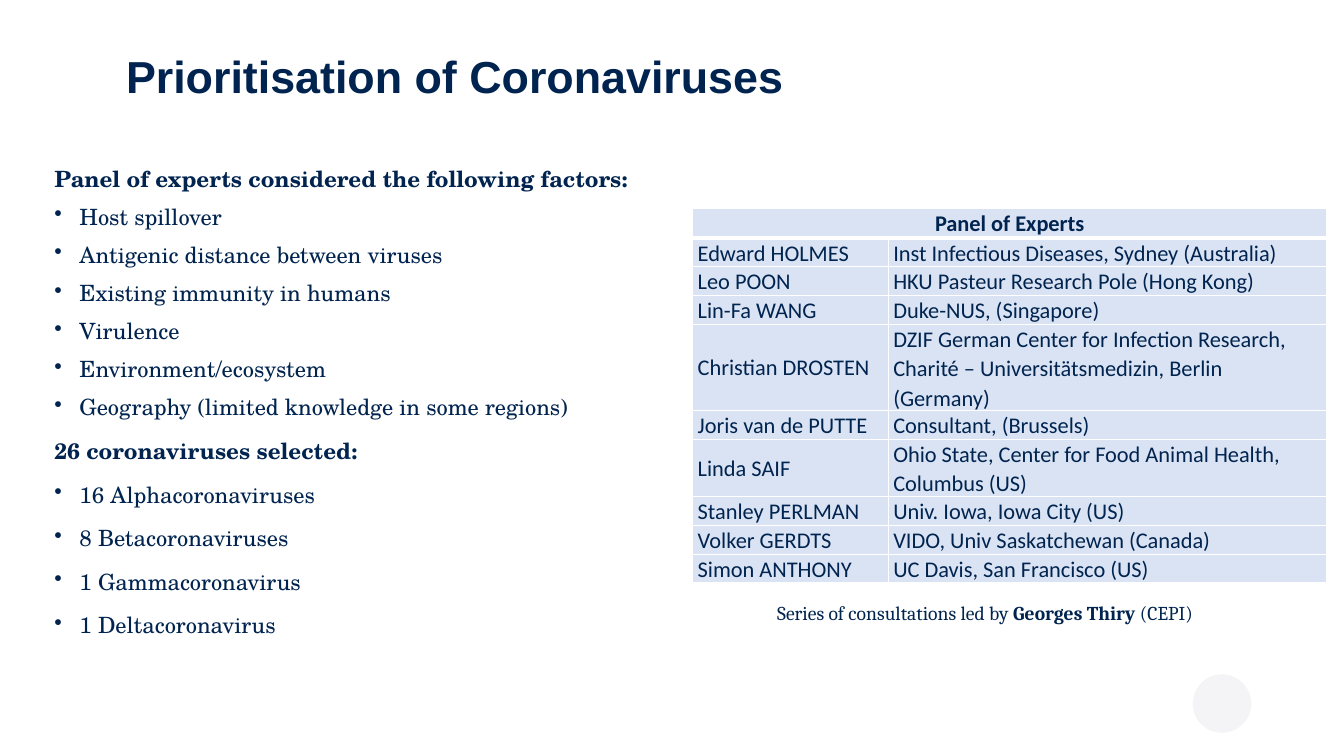
from dataclasses import dataclass

import lxml.etree
import pptx
import pptx.dml.color
import pptx.enum.shapes
import pptx.enum.text
import pptx.oxml.ns
import pptx.util

Inches = pptx.util.Inches
Align = pptx.enum.text.PP_ALIGN
Anchor = pptx.enum.text.MSO_ANCHOR


@dataclass(frozen=True)
class Theme:
    navy: str = "00244F"
    pale: str = "DAE3F3"
    white: str = "FFFFFF"
    gray: str = "F4F4F6"
    head: int = 32
    main: int = 16
    note: int = 14


@dataclass(frozen=True)
class Group:
    head: str
    items: tuple[str, ...]
    lead: float


@dataclass(frozen=True)
class Expert:
    name: str
    place: str


THEME = Theme()

GROUPS = (
    Group("Panel of experts considered the following factors:", (
        "Host spillover",
        "Antigenic distance between viruses",
        "Existing immunity in humans",
        "Virulence",
        "Environment/ecosystem",
        "Geography (limited knowledge in some regions)",
    ), 0.9),
    Group("26 coronaviruses selected:", (
        "16 Alphacoronaviruses",
        "8 Betacoronaviruses",
        "1 Gammacoronavirus",
        "1 Deltacoronavirus",
    ), 1.1),
)

EXPERTS = (
    Expert("Edward HOLMES", "Inst Infectious Diseases, Sydney (Australia)"),
    Expert("Leo POON", "HKU Pasteur Research Pole (Hong Kong)"),
    Expert("Lin-Fa WANG", "Duke-NUS, (Singapore)"),
    Expert("Christian DROSTEN", "DZIF German Center for Infection Research, "
           "Charité – Universitätsmedizin, Berlin (Germany)"),
    Expert("Joris van de PUTTE", "Consultant, (Brussels)"),
    Expert("Linda SAIF", "Ohio State, Center for Food Animal Health, Columbus (US)"),
    Expert("Stanley PERLMAN", "Univ. Iowa, Iowa City (US)"),
    Expert("Volker GERDTS", "VIDO, Univ Saskatchewan (Canada)"),
    Expert("Simon ANTHONY", "UC Davis, San Francisco (US)"),
)


def color(code: str) -> pptx.dml.color.RGBColor:
    return pptx.dml.color.RGBColor.from_string(code)


def write(para, text: str, *, font: str, size: int, bold: bool = False,
          align=Align.LEFT, lead: float = 1.0, before: int = 0,
          after: int = 0, bullet: bool = False) -> None:
    para.alignment = align
    para.line_spacing = lead
    para.space_before = pptx.util.Pt(before)
    para.space_after = pptx.util.Pt(after)
    run = para.add_run()
    run.text = text
    run.font.name = font
    run.font.size = pptx.util.Pt(size)
    run.font.bold = bold
    run.font.color.rgb = color(THEME.navy)
    if bullet:
        props = para._p.get_or_add_pPr()
        props.set("marL", str(Inches(0.25)))
        props.set("indent", str(-Inches(0.25)))
        mark = lxml.etree.SubElement(props, pptx.oxml.ns.qn("a:buChar"))
        mark.set("char", "•")


def border(cell, top: int, bottom: int) -> None:
    props = cell._tc.get_or_add_tcPr()
    sides = (("L", 1), ("R", 1), ("T", top), ("B", bottom))
    for spot, (side, width) in enumerate(sides):
        line = lxml.etree.Element(pptx.oxml.ns.qn(f"a:ln{side}"))
        line.set("w", str(pptx.util.Pt(width)))
        fill = lxml.etree.SubElement(line, pptx.oxml.ns.qn("a:solidFill"))
        tint = lxml.etree.SubElement(fill, pptx.oxml.ns.qn("a:srgbClr"))
        tint.set("val", THEME.white)
        props.insert(spot, line)


def add_title(slide) -> None:
    title = slide.shapes.title
    title.left, title.top = Inches(1.15), Inches(0.49)
    title.width, title.height = Inches(11.5), Inches(0.82)
    frame = title.text_frame
    frame.auto_size = pptx.enum.text.MSO_AUTO_SIZE.NONE
    frame.vertical_anchor = Anchor.TOP
    write(frame.paragraphs[0], "Prioritisation of Coronaviruses",
          font="Arial", size=THEME.head, bold=True, lead=0.9)


def add_box(slide, left: float, top: float, width: float, height: float):
    box = slide.shapes.add_textbox(Inches(left), Inches(top), Inches(width), Inches(height))
    box.text_frame.word_wrap = True
    return box.text_frame


def add_lists(slide) -> None:
    frame = add_box(slide, 0.44, 1.56, 6.8, 4.9)
    style = dict(font="TeX Gyre Schola", size=THEME.main, before=10)
    for index, group in enumerate(GROUPS):
        para = frame.add_paragraph() if index else frame.paragraphs[0]
        write(para, group.head, bold=True, lead=1.1, **style)
        for item in group.items:
            write(frame.add_paragraph(), item, lead=group.lead, bullet=True, **style)


def add_panel(slide) -> None:
    rows = [("Panel of Experts", "")] + [(each.name, each.place) for each in EXPERTS]
    table = slide.shapes.add_table(len(rows), 2, Inches(6.87), Inches(2.07),
                                   Inches(6.29), Inches(0.28 * len(rows))).table
    table.first_row = table.horz_banding = False
    for column, width in zip(table.columns, (1.94, 4.35)):
        column.width = Inches(width)
    table.cell(0, 0).merge(table.cell(0, 1))
    for row, texts in enumerate(rows):
        head = row == 0
        table.rows[row].height = Inches(0.29 if head else 0.28)
        for column, text in enumerate(texts):
            cell = table.cell(row, column)
            cell.fill.solid()
            cell.fill.fore_color.rgb = color(THEME.pale)
            cell.vertical_anchor = Anchor.MIDDLE
            cell.margin_left = cell.margin_right = Inches(0.05)
            cell.margin_top = cell.margin_bottom = 0
            border(cell, top=3 if row == 1 else 1, bottom=3 if head else 1)
            if text:
                write(cell.text_frame.paragraphs[0], text, font="Calibri",
                      size=THEME.main, bold=head, lead=1.07, after=8,
                      align=Align.CENTER if head else Align.LEFT)


def add_note(slide) -> None:
    para = add_box(slide, 7.61, 5.91, 5.2, 0.34).paragraphs[0]
    parts = (("Series of consultations led by ", False),
             ("Georges Thiry ", True), ("(CEPI)", False))
    for text, bold in parts:
        write(para, text, font="Cambria", size=THEME.note, bold=bold)


def add_disc(slide) -> None:
    disc = slide.shapes.add_shape(pptx.enum.shapes.MSO_SHAPE.OVAL, Inches(11.83),
                                  Inches(6.69), Inches(0.58), Inches(0.58))
    disc.shadow.inherit = False
    disc.fill.solid()
    disc.fill.fore_color.rgb = color(THEME.gray)
    disc.line.fill.background()


def main() -> None:
    deck = pptx.Presentation()
    deck.slide_width, deck.slide_height = Inches(13.33), Inches(7.5)
    slide = deck.slides.add_slide(deck.slide_layouts[5])
    for draw in (add_disc, add_lists, add_title, add_panel, add_note):
        draw(slide)
    deck.save("out.pptx")


if __name__ == "__main__":
    main()
